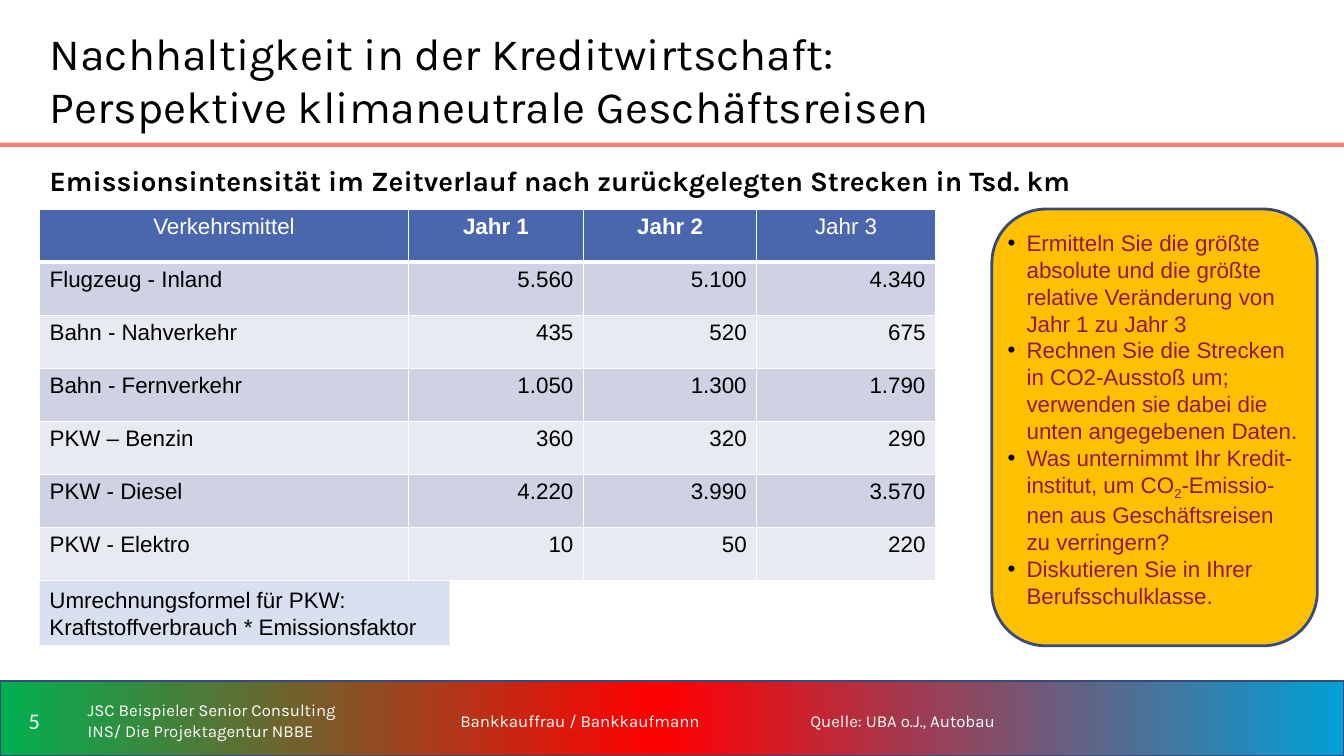
from copy import deepcopy
from dataclasses import dataclass

from lxml import etree
from pptx import Presentation
from pptx.dml.color import RGBColor
from pptx.enum import shapes, text
from pptx.oxml import ns
from pptx.util import Pt

BLACK, WHITE, OUTLINE = "000000", "FFFFFF", "364A7D"
LEFT, TABLE_TOP = 28.3, 149.3
ALIGN = text.PP_ALIGN
ANCHOR = text.MSO_ANCHOR


@dataclass
class Box:
    left: float
    top: float
    width: float
    height: float

    def lengths(self) -> list:
        return [Pt(value) for value in (self.left, self.top, self.width, self.height)]


@dataclass
class Style:
    size: float
    font: str = "Karla"
    color: str = BLACK
    bold: bool = False
    align: ALIGN = ALIGN.LEFT
    spacing: float = 1.0


@dataclass
class Label:
    box: Box
    wording: str
    style: Style
    anchor: ANCHOR = ANCHOR.MIDDLE


FOOTER_TOP, FOOTER_HEIGHT = 492.5, 44
LABELS = [
    Label(Box(0, FOOTER_TOP, 49, FOOTER_HEIGHT), "5",
          Style(16, "Calibri", WHITE, align=ALIGN.CENTER)),
    Label(Box(55.5, FOOTER_TOP, 200, FOOTER_HEIGHT),
          "JSC Beispieler Senior Consulting INS/ Die Projektagentur NBBE",
          Style(12, color=WHITE)),
    Label(Box(263.5, FOOTER_TOP, 301.7, FOOTER_HEIGHT), "Bankkauffrau / Bankkaufmann",
          Style(12, color=WHITE, align=ALIGN.CENTER, spacing=1.1)),
    Label(Box(571.7, FOOTER_TOP, 363.6, FOOTER_HEIGHT), "Quelle: UBA o.J., Autobau",
          Style(12, color=WHITE, spacing=1.1)),
    Label(Box(LEFT, 113, 907, 31.7),
          "Emissionsintensität im Zeitverlauf nach zurückgelegten Strecken in Tsd. km",
          Style(20, bold=True), ANCHOR.TOP),
]

COLUMN_WIDTHS = [263.5, 125, 123.8, 127.7]
ROW_HEIGHT = 37.9
ROWS = [
    ["Verkehrsmittel", "Jahr 1", "Jahr 2", "Jahr 3"],
    ["Flugzeug - Inland", "5.560", "5.100", "4.340"],
    ["Bahn - Nahverkehr", "435", "520", "675"],
    ["Bahn - Fernverkehr", "1.050", "1.300", "1.790"],
    ["PKW – Benzin", "360", "320", "290"],
    ["PKW - Diesel", "4.220", "3.990", "3.570"],
    ["PKW - Elektro", "10", "50", "220"],
]
BOLD_HEADINGS = ("Jahr 1", "Jahr 2")

# Each task is a list of runs; odd runs are subscripts.
TASKS = [
    ["Ermitteln Sie die größte absolute und die größte relative Veränderung "
     "von Jahr 1 zu Jahr 3"],
    ["Rechnen Sie die Strecken in CO2-Ausstoß um; verwenden sie dabei die "
     "unten angegebenen Daten."],
    ["Was unternimmt Ihr Kredit- institut, um CO", "2",
     "-Emissio- nen aus Geschäftsreisen zu verringern?"],
    ["Diskutieren Sie in Ihrer Berufsschulklasse."],
]


def rgb(color: str) -> RGBColor:
    return RGBColor.from_string(color)


def add_run(paragraph, wording: str, style: Style):
    paragraph.alignment = style.align
    paragraph.line_spacing = style.spacing
    run = paragraph.add_run()
    run.text = wording
    run.font.name = style.font
    run.font.size = Pt(style.size)
    run.font.bold = style.bold
    run.font.color.rgb = rgb(style.color)
    return run


def paragraph_at(frame, index: int):
    return frame.add_paragraph() if index else frame.paragraphs[0]


def add_box(slide, box: Box, fill: str, line: str = "", line_width: float = 1,
            kind=shapes.MSO_SHAPE.RECTANGLE):
    shape = slide.shapes.add_shape(kind, *box.lengths())
    shape.shadow.inherit = False
    shape.fill.solid()
    shape.fill.fore_color.rgb = rgb(fill)
    if line:
        shape.line.color.rgb = rgb(line)
        shape.line.width = Pt(line_width)
    else:
        shape.line.fill.background()
    shape.text_frame.word_wrap = True
    shape.text_frame.vertical_anchor = ANCHOR.TOP
    return shape


def add_footer_band(slide) -> None:
    band = add_box(slide, Box(0, 486.5, 960, 53.5), WHITE, OUTLINE)
    band.fill.gradient()
    band.fill.gradient_angle = 0
    stop_list = band.element.spPr.find(".//" + ns.qn("a:gsLst"))
    stop_list.append(deepcopy(stop_list[-1]))
    colors = ["00B050", "FF0000", "01A0D6"]
    for stop, position, color in zip(band.fill.gradient_stops, (0, 0.49, 1), colors):
        stop.position = position
        stop.color.rgb = rgb(color)


def add_title(slide) -> None:
    title = slide.shapes.title
    title.left, title.top, title.width, title.height = Box(LEFT, 14.4, 907, 85).lengths()
    frame = title.text_frame
    frame.word_wrap = True
    frame.auto_size = text.MSO_AUTO_SIZE.NONE
    frame.vertical_anchor = ANCHOR.TOP
    paragraph = frame.paragraphs[0]
    add_run(paragraph, "Nachhaltigkeit in der Kreditwirtschaft:", Style(32))
    paragraph.add_line_break()
    add_run(paragraph, "Perspektive klimaneutrale Geschäftsreisen", Style(32))


def add_label(slide, label: Label) -> None:
    frame = slide.shapes.add_textbox(*label.box.lengths()).text_frame
    frame.word_wrap = True
    frame.vertical_anchor = label.anchor
    add_run(frame.paragraphs[0], label.wording, label.style)


def add_bullet(paragraph) -> None:
    properties = paragraph._p.get_or_add_pPr()
    properties.set("marL", str(Pt(13.5)))
    properties.set("indent", str(Pt(-13.5)))
    color = etree.SubElement(properties, ns.qn("a:buClr"))
    etree.SubElement(color, ns.qn("a:srgbClr"), val=BLACK)
    etree.SubElement(properties, ns.qn("a:buFont"), typeface="Arial")
    etree.SubElement(properties, ns.qn("a:buChar"), char="•")


def add_tasks(slide) -> None:
    card = add_box(slide, Box(708.5, TABLE_TOP, 232.5, 312), "FFC000", OUTLINE, 2,
                   shapes.MSO_SHAPE.ROUNDED_RECTANGLE)
    frame = card.text_frame
    frame.margin_left = frame.margin_right = frame.margin_bottom = 0
    frame.margin_top = Pt(3)
    for index, task in enumerate(TASKS):
        paragraph = paragraph_at(frame, index)
        add_bullet(paragraph)
        for position, wording in enumerate(task):
            run = add_run(paragraph, wording, Style(16, "Arial", "941651"))
            if position % 2:
                run.font._element.set("baseline", "-25000")


def add_borders(cell, bottom_width: float) -> None:
    properties = cell._tc.get_or_add_tcPr()
    for side, width in (("L", 1), ("R", 1), ("T", 1), ("B", bottom_width)):
        line = etree.SubElement(properties, ns.qn(f"a:ln{side}"), w=str(Pt(width)))
        fill = etree.SubElement(line, ns.qn("a:solidFill"))
        etree.SubElement(fill, ns.qn("a:srgbClr"), val=WHITE)


def add_distance_table(slide) -> None:
    box = Box(LEFT, TABLE_TOP, sum(COLUMN_WIDTHS), ROW_HEIGHT * len(ROWS))
    table = slide.shapes.add_table(len(ROWS), len(COLUMN_WIDTHS), *box.lengths()).table
    for column, width in zip(table.columns, COLUMN_WIDTHS):
        column.width = Pt(width)
    for row_index, row in enumerate(ROWS):
        table.rows[row_index].height = Pt(ROW_HEIGHT)
        for column_index, wording in enumerate(row):
            cell = table.cell(row_index, column_index)
            if row_index == 0:
                fill, bottom = "4A66AC", 3
                style = Style(16, "Arial", WHITE, wording in BOLD_HEADINGS, ALIGN.CENTER)
            else:
                fill, bottom = ("CED2E2" if row_index % 2 else "E8EAF1"), 1
                style = Style(16, "Arial", align=ALIGN.RIGHT if column_index else ALIGN.LEFT)
            add_borders(cell, bottom)
            cell.fill.solid()
            cell.fill.fore_color.rgb = rgb(fill)
            add_run(cell.text_frame.paragraphs[0], wording, style)


def add_formula(slide) -> None:
    frame = add_box(slide, Box(LEFT, 415, 293, 46), "D8DFEF").text_frame
    lines = ["Umrechnungsformel für PKW:", "Kraftstoffverbrauch * Emissionsfaktor"]
    for index, wording in enumerate(lines):
        add_run(paragraph_at(frame, index), wording, Style(16, "Arial"))


def main() -> None:
    presentation = Presentation()
    presentation.slide_width, presentation.slide_height = Pt(960), Pt(540)
    slide = presentation.slides.add_slide(presentation.slide_layouts[5])
    add_footer_band(slide)
    add_box(slide, Box(0, 102, 960, 3), "FF7E79")
    add_title(slide)
    for label in LABELS:
        add_label(slide, label)
    add_tasks(slide)
    add_formula(slide)
    add_distance_table(slide)
    presentation.save("out.pptx")


if __name__ == "__main__":
    main()
